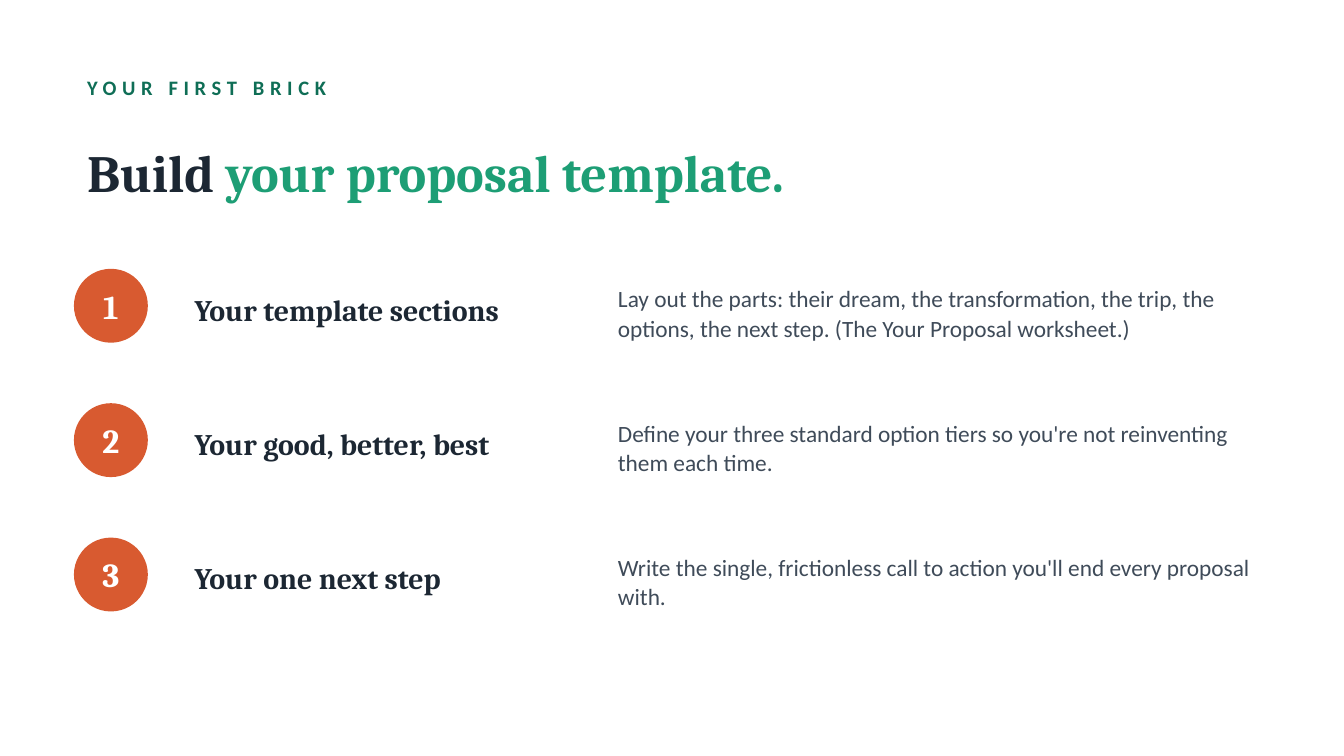
from typing import NamedTuple

from pptx import Presentation
from pptx.dml.color import RGBColor
from pptx.enum.shapes import MSO_SHAPE as Shape
from pptx.enum.text import MSO_ANCHOR as Anchor, PP_ALIGN as Align
from pptx.util import Inches, Pt

SERIF, SANS = "Cambria", "Calibri"
INK, GREEN, DARK_GREEN = "1C2733", "1D9E75", "0F6E56"
ORANGE, SLATE, WHITE = "D85A30", "3F4B59", "FFFFFF"


class Step(NamedTuple):
    title: str
    detail: str


STEPS = [
    Step("Your template sections",
         "Lay out the parts: their dream, the transformation, the trip, the "
         "options, the next step. (The Your Proposal worksheet.)"),
    Step("Your good, better, best",
         "Define your three standard option tiers so you're not reinventing "
         "them each time."),
    Step("Your one next step",
         "Write the single, frictionless call to action you'll end every "
         "proposal with."),
]
FIRST_TOP, STEP_PITCH = 2, 1


def rgb(color: str) -> RGBColor:
    return RGBColor.from_string(color)


def add_run(p, text: str, *, size: float, color: str, font: str = SERIF,
            bold: bool = True, spacing: float = 0) -> None:
    """Append a run; spacing is the letter spacing in points."""
    r = p.add_run()
    r.text = text
    r.font.name, r.font.size, r.font.bold = font, Pt(size), bold
    r.font.color.rgb = rgb(color)
    if spacing:
        r.font._element.set("spc", str(int(spacing * 100)))


def add_text(s, left: float, top: float, width: float, height: float,
             text: str, *, line_spacing: float | None = None, **fmt):
    """Add a vertically centred text box and return its paragraph."""
    tf = s.shapes.add_textbox(Inches(left), Inches(top),
                              Inches(width), Inches(height)).text_frame
    tf.word_wrap = True
    tf.vertical_anchor = Anchor.MIDDLE
    p = tf.paragraphs[0]
    if line_spacing:
        p.line_spacing = line_spacing
    add_run(p, text, **fmt)
    return p


def add_badge(s, left: float, top: float, size: float, number: int) -> None:
    sp = s.shapes.add_shape(Shape.OVAL, Inches(left), Inches(top),
                            Inches(size), Inches(size))
    sp.shadow.inherit = False
    sp.fill.solid()
    sp.fill.fore_color.rgb = rgb(ORANGE)
    sp.line.fill.background()
    tf = sp.text_frame
    tf.margin_left = tf.margin_right = tf.margin_top = tf.margin_bottom = 0
    tf.vertical_anchor = Anchor.MIDDLE
    p = tf.paragraphs[0]
    p.alignment = Align.CENTER
    add_run(p, str(number), size=18, color=WHITE)


def add_step(s, top: float, number: int, step: Step) -> None:
    add_badge(s, 0.55, top, 0.55, number)
    add_text(s, 1.35, top - 0.05, 3, 0.7, step.title, size=16, color=INK)
    add_text(s, 4.5, top - 0.05, 5, 0.75, step.detail, line_spacing=1.05,
             size=12.5, color=SLATE, font=SANS, bold=False)


def main() -> None:
    prs = Presentation()
    prs.slide_width = Inches(10)
    prs.slide_height = Inches(10 * 9 / 16)
    s = prs.slides.add_slide(prs.slide_layouts[6])
    s.background.fill.solid()
    s.background.fill.fore_color.rgb = rgb(WHITE)

    add_text(s, 0.55, 0.5, 8.9, 0.3, "YOUR FIRST BRICK",
             size=11, color=DARK_GREEN, font=SANS, spacing=3)
    heading = add_text(s, 0.55, 0.85, 8.9, 0.85, "Build ", size=28, color=INK)
    add_run(heading, "your proposal template.", size=28, color=GREEN)

    for i, step in enumerate(STEPS):
        add_step(s, FIRST_TOP + i * STEP_PITCH, i + 1, step)

    prs.save("out.pptx")


if __name__ == "__main__":
    main()
